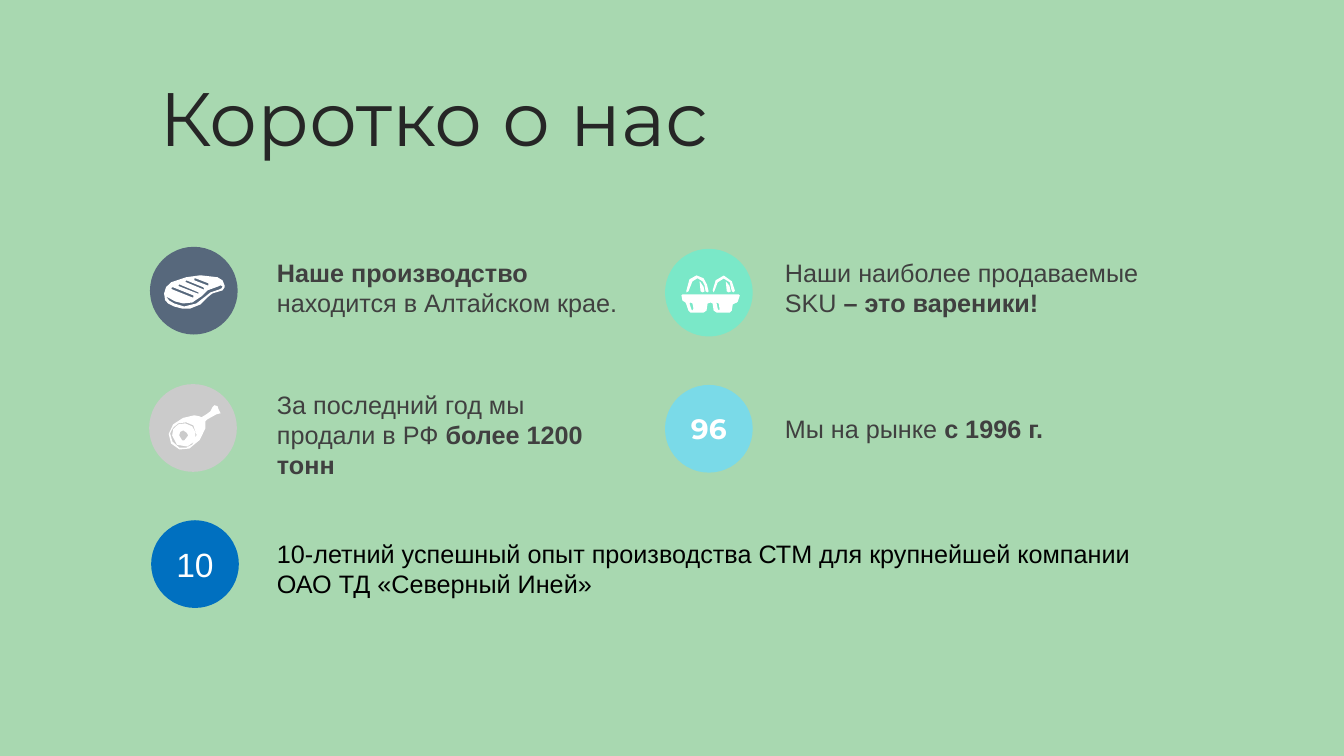
import pptx
import pptx.dml.color
import pptx.enum.shapes
import pptx.enum.text
import pptx.util

Cm = pptx.util.Cm
RGBColor = pptx.dml.color.RGBColor
MIDDLE = pptx.enum.text.MSO_ANCHOR.MIDDLE
CENTER = pptx.enum.text.PP_ALIGN.CENTER

MINT = RGBColor(0xA8, 0xD8, 0xB0)
SLATE = RGBColor(0x57, 0x68, 0x7C)
SILVER = RGBColor(0xCB, 0xCB, 0xCB)
AQUA = RGBColor(0x7A, 0xE8, 0xC8)
SKY = RGBColor(0x7A, 0xDA, 0xE8)
BLUE = RGBColor(0x00, 0x70, 0xC0)
WHITE = RGBColor(0xFF, 0xFF, 0xFF)
BLACK = RGBColor(0x00, 0x00, 0x00)
INK = RGBColor(0x26, 0x26, 0x26)
GRAY = RGBColor(0x40, 0x40, 0x40)

# Icon outlines, in hundredths of an inch from the icon's corner
STEAK = [
    [(39, 3), (56, 5), (61, 8), (63, 13), (63, 15), (61, 18), (51, 21), (46, 25), (39, 32),
     (29, 36), (21, 36.1), (13, 34), (7, 31), (4, 27.6), (3, 21), (5, 14.8), (10, 10), (25, 5)],
    [(59, 13), (57, 14), (46, 18), (40, 24), (31, 30), (22, 31), (14, 29), (5, 24), (8, 28),
     (13, 31), (23, 34), (35, 31), (44, 24), (49, 20), (58, 17), (60, 16), (61, 14)],
    [(11, 15), (10, 16), (11, 17), (31, 25), (32, 25), (32, 23), (12, 15)],
    [(18, 12), (17, 13), (18, 14), (36, 21), (38, 21), (37, 20)],
    [(25, 8), (24, 9), (25, 10), (42, 17), (43, 17), (42, 15)],
    [(33, 6), (33, 8), (46, 13), (47, 13), (47, 11), (34, 6)],
]
HAM = [
    [(53, 2), (56, 3), (57, 6), (59, 10), (55, 11), (46, 16), (44, 18), (44, 20), (44, 25),
     (38.3, 36.5), (28, 45), (18.3, 45.9), (10, 40), (7.6, 30.5), (12, 21), (21.8, 14.6),
     (33, 12), (38, 13), (40, 14), (45, 11), (49, 8), (51, 4)],
    [(25, 19), (17, 20), (11.9, 24.3), (9, 30), (11.3, 38.1), (18, 44), (25.3, 44),
     (31, 41), (35.3, 31.5), (32, 22)],
    [(24, 20), (31, 23), (34, 28.8), (34, 35), (31.1, 39.4), (26, 43), (15.9, 41.3),
     (11, 32), (12.1, 25.8), (17, 21)],
    [(22, 27), (18.9, 28.4), (18, 32), (21, 37), (23, 37), (27, 32), (25.3, 29.1)],
]
RIGHT_EGG = [[(59, 18), (58, 20), (56, 19), (54, 10), (48, 6.3), (42, 10), (39, 18), (38, 20),
              (37, 18), (40, 8), (48, 3.3), (56, 9)]]
LEFT_EGG = [[(11, 18), (14, 7), (21, 3.1), (28, 6), (31.3, 12.1), (33, 19), (32, 20), (30, 19),
             (29, 13), (27, 9), (22, 6), (17, 9), (13, 19), (11, 20)]]
RIGHT_GLINT = [[(50, 9), (53.6, 13.3), (55, 19), (53, 20), (51, 19)]]
LEFT_GLINT = [[(24, 9), (25, 10), (28, 14.5), (29, 19), (27, 20), (25, 19)]]
TRAY = [
    [(63, 22), (7, 22), (6, 23), (7, 28), (10, 30), (11, 32), (13, 38), (15, 40), (28, 40),
     (31, 38), (32, 31), (35, 30), (37, 31), (38, 38), (41, 40), (54, 40), (56, 38), (57, 32),
     (61, 30), (62, 29), (64, 23)],
    [(17, 38), (16, 37), (14, 31), (15, 30), (17, 31), (18, 36)],
    [(43, 38), (42, 36), (41, 31), (41, 30), (43, 31), (44, 37)],
]


class AboutSlide:
    def __init__(self, presentation):
        self.slide = presentation.slides.add_slide(presentation.slide_layouts[6])
        self.body = {"name": "Arial", "size": pptx.util.Pt(18), "bold": False}
        background = self.slide.background.fill
        background.solid()
        background.fore_color.rgb = MINT

    def paint(self, shape, color):
        shape.shadow.inherit = False
        shape.fill.solid()
        shape.fill.fore_color.rgb = color
        shape.line.fill.background()

    def add_runs(self, paragraph, runs, color, **style):
        """Add (text, bold) runs in the body style, changed by style."""
        for text, bold in runs:
            run = paragraph.add_run()
            run.text = text
            for name, value in {**self.body, "bold": bold, **style}.items():
                setattr(run.font, name, value)
            run.font.color.rgb = color

    def text(self, left, top, width, height, paragraphs, color=GRAY):
        box = self.slide.shapes.add_textbox(Cm(left), Cm(top), Cm(width), Cm(height))
        frame = box.text_frame
        frame.word_wrap = True
        frame.auto_size = pptx.enum.text.MSO_AUTO_SIZE.SHAPE_TO_FIT_TEXT
        for index, runs in enumerate(paragraphs):
            paragraph = frame.add_paragraph() if index else frame.paragraphs[0]
            self.add_runs(paragraph, runs, color)

    def title(self, text):
        box = self.slide.shapes.add_textbox(Cm(3.76), Cm(2.06), Cm(18.75), Cm(2.01))
        frame = box.text_frame
        frame.word_wrap = True
        frame.vertical_anchor = MIDDLE
        frame.paragraphs[0].line_spacing = 0.9
        self.add_runs(frame.paragraphs[0], [(text, False)], INK,
                      name="Montserrat", size=pptx.util.Pt(54))

    def circle(self, left, top, color, number="", **style):
        shape = self.slide.shapes.add_shape(
            pptx.enum.shapes.MSO_SHAPE.OVAL, Cm(left), Cm(top), Cm(2.21), Cm(2.21))
        self.paint(shape, color)
        if number:
            shape.text_frame.vertical_anchor = MIDDLE
            paragraph = shape.text_frame.paragraphs[0]
            paragraph.alignment = CENTER
            self.add_runs(paragraph, [(number, False)], WHITE, **style)

    def icon(self, left, top, contours):
        """Draw white closed contours; inner ones cut holes."""
        scaled = [[(round(x * 10), round(y * 10)) for x, y in points] for points in contours]
        builder = self.slide.shapes.build_freeform(*scaled[0][0], scale=Cm(2.54) / 1000)
        for index, points in enumerate(scaled):
            if index:
                builder.move_to(*points[0])
            builder.add_line_segments(points[1:], close=True)
        self.paint(builder.convert_to_shape(Cm(left), Cm(top)), WHITE)


def main():
    presentation = pptx.Presentation()
    presentation.slide_width = Cm(33.87)
    presentation.slide_height = Cm(19.05)
    about = AboutSlide(presentation)
    about.title("Коротко о нас")

    about.circle(3.78, 6.22, SLATE)
    about.icon(4.06, 6.86, STEAK)
    about.text(6.73, 6.35, 10.39, 1.8, [
        [("Наше производство", True)], [("находится в Алтайском крае.", False)]])

    about.circle(3.76, 9.68, SILVER)
    about.icon(4.06, 10.16, HAM)
    about.text(6.73, 9.68, 8.84, 2.57, [
        [("За последний год мы продали в РФ ", False), ("более 1200 тонн", True)]])

    about.circle(16.76, 6.27, AQUA)
    for part in (RIGHT_EGG, LEFT_EGG, RIGHT_GLINT, LEFT_GLINT, TRAY):
        about.icon(17.02, 6.86, part)
    about.text(19.53, 6.35, 10.57, 1.8, [
        [("Наши наиболее продаваемые SKU ", False), ("– это вареники!", True)]])

    about.circle(16.76, 9.7, SKY, "96", name="Montserrat", size=pptx.util.Pt(20), bold=True)
    about.text(19.53, 10.29, 10.57, 1.02, [
        [("Мы на рынке ", False), ("с 1996 г.", True)]])

    about.circle(3.81, 13.11, BLUE, "10", size=pptx.util.Pt(24))
    about.text(6.73, 13.44, 23.06, 1.8, [
        [("10-летний успешный опыт производства СТМ для крупнейшей компании "
          "ОАО ТД «Северный Иней»", False)]], BLACK)
    presentation.save("out.pptx")


if __name__ == "__main__":
    main()
